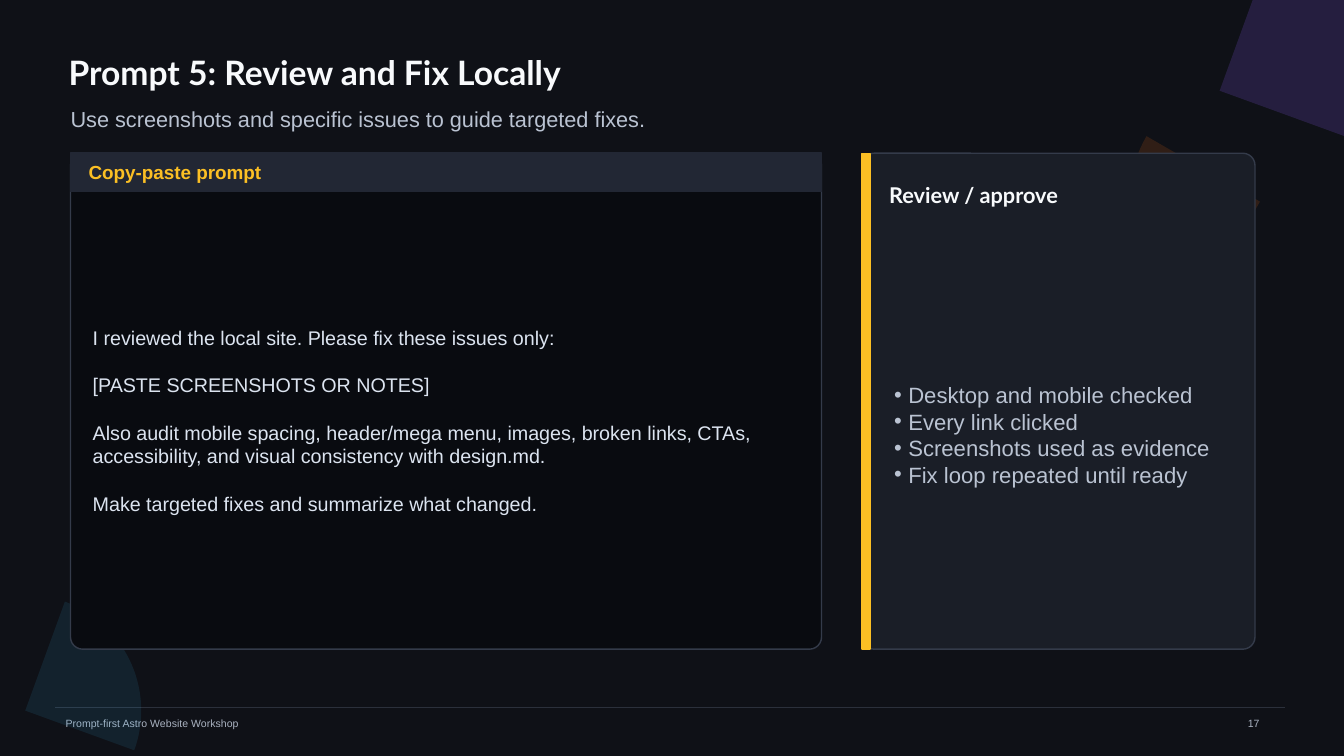
from dataclasses import dataclass

from lxml import etree
from pptx import Presentation
from pptx.dml.color import RGBColor
from pptx.enum.shapes import MSO_CONNECTOR, MSO_SHAPE
from pptx.enum.text import MSO_ANCHOR, MSO_AUTO_SIZE, PP_ALIGN
from pptx.oxml.ns import qn
from pptx.util import Inches, Pt

RECT, ROUNDED, ARC = MSO_SHAPE.RECTANGLE, MSO_SHAPE.ROUNDED_RECTANGLE, MSO_SHAPE.ARC
STRAIGHT = MSO_CONNECTOR.STRAIGHT
MIDDLE, LEFT, NO_FIT = MSO_ANCHOR.MIDDLE, PP_ALIGN.LEFT, MSO_AUTO_SIZE.NONE

WIDTH, HEIGHT = Inches(13.333), Inches(7.5)
CORNER = Inches(0.12)
BULLET_INDENT = Inches(0.14)
HEADING_FONT, TEXT_FONT = "Lato", "Arial"
COLORS = {
    "page": "0F1117", "rule": "2B303B", "footer": "AAB3C1", "white": "F8FAFC",
    "muted": "BAC3D2", "prompt": "DCE4F0", "amber": "FBBF24", "editor": "090B10",
    "header": "222734", "card": "1A1E27", "border": "343B4A",
    "violet": "8B5CF6", "orange": "F97316", "sky": "38BDF8",
}
PROMPT = [
    "I reviewed the local site. Please fix these issues only:",
    "[PASTE SCREENSHOTS OR NOTES]",
    "Also audit mobile spacing, header/mega menu, images, broken links, CTAs, "
    "accessibility, and visual consistency with design.md.",
    "Make targeted fixes and summarize what changed.",
]
CHECKS = [
    "Desktop and mobile checked",
    "Every link clicked",
    "Screenshots used as evidence",
    "Fix loop repeated until ready",
]


@dataclass
class Box:
    """Area in percent of the slide's width and height."""
    left: float
    top: float
    width: float
    height: float

    def inner(self, left, top, width, height):
        return Box(self.left + left, self.top + top, width, height)

    def lengths(self):
        return (int(WIDTH * self.left / 100), int(HEIGHT * self.top / 100),
                int(WIDTH * self.width / 100), int(HEIGHT * self.height / 100))


def rgb(name):
    return RGBColor.from_string(COLORS[name])


def add_panel(page, kind, box, fill, line=None):
    shape = page.shapes.add_shape(kind, *box.lengths())
    shape.shadow.inherit = False
    shape.fill.solid()
    shape.fill.fore_color.rgb = rgb(fill)
    if line:
        shape.line.color.rgb = rgb(line)
        shape.line.width = Pt(1)
    else:
        shape.line.fill.background()
    if kind == ROUNDED:
        shape.adjustments[0] = CORNER / min(shape.width, shape.height)
    return shape


def write(shape, lines, size, color, font=TEXT_FONT, bold=False, gap=0, bullet=False):
    frame = shape.text_frame
    frame.word_wrap = True
    frame.auto_size = NO_FIT
    frame.vertical_anchor = MIDDLE
    frame.margin_left = frame.margin_right = frame.margin_top = frame.margin_bottom = 0
    for index, line in enumerate(lines):
        para = frame.add_paragraph() if index else frame.paragraphs[0]
        para.alignment = LEFT
        para.space_before = Pt(gap if index else 0)
        if bullet:
            properties = para._p.get_or_add_pPr()
            properties.set("marL", str(BULLET_INDENT))
            properties.set("indent", str(-BULLET_INDENT))
            etree.SubElement(properties, qn("a:buChar")).set("char", "•")
        span = para.add_run()
        span.text = line
        span.font.name = font
        span.font.size = Pt(size)
        span.font.bold = bold
        span.font.color.rgb = rgb(color)


def add_text(page, box, lines, size, color, **style):
    write(page.shapes.add_textbox(*box.lengths()), lines, size, color, **style)


def fill_placeholder(shape, box, lines, size, color, **style):
    """Move a placeholder into the box, in front of everything drawn so far."""
    shape.left, shape.top, shape.width, shape.height = box.lengths()
    shape.element.getparent().append(shape.element)
    write(shape, lines, size, color, **style)


def add_footer(page, box, label, number):
    left, top, width, _ = box.lengths()
    rule = page.shapes.add_connector(STRAIGHT, left, top, left + width, top)
    rule.line.color.rgb = rgb("rule")
    rule.line.width = Pt(0.75)
    etree.SubElement(rule._element.spPr, qn("a:effectLst"))
    add_text(page, box.inner(0.75, 0.8, 41.25, 2.67), [label], 7.5, "footer")
    add_text(page, box.inner(88.72, 0.8, 5, 2.67), [number], 7.5, "footer")


def add_wedge(page, center_x, center_y, radius, turn, color, opacity):
    """Draw a quarter disc; the radius is a share of the slide's width."""
    tall = radius * WIDTH / HEIGHT
    box = Box(center_x - radius, center_y - tall, 2 * radius, 2 * tall)
    wedge = add_panel(page, ARC, box, color)
    wedge.rotation = turn
    fill_color = wedge._element.spPr.find(qn("a:solidFill"))[0]
    etree.SubElement(fill_color, qn("a:alpha")).set("val", str(opacity * 1000))


def add_heading(page, box, title, subtitle):
    fill_placeholder(page.shapes.title, box.inner(0, 0, box.width, 6.93), [title],
                     24, "white", font=HEADING_FONT, bold=True)
    add_text(page, box.inner(0.15, 7.87, box.width, 3.6), [subtitle], 15.5, "muted")


def add_prompt(page, box, label, lines):
    add_panel(page, ROUNDED, box, "editor", "border")
    add_panel(page, RECT, box.inner(0, 0, box.width, 5.07), "header", "header")
    add_text(page, box.inner(1.35, 1.6, box.width - 2.7, 1.73), [label],
             13.5, "amber", bold=True)
    add_text(page, box.inner(1.65, 7.33, box.width - 3.3, 56), lines,
             14.1, "prompt", gap=17)


def add_review(page, box, heading, checks):
    add_panel(page, ROUNDED, box, "card", "border")
    add_panel(page, RECT, box.inner(0, 0, 0.6, box.height), "amber", "amber")
    add_text(page, box.inner(2.03, 3.6, 25.65, 3.73), [heading],
             15.5, "white", font=HEADING_FONT, bold=True)
    fill_placeholder(page.placeholders[1], box.inner(2.4, 10.93, 25.13, 52.53),
                     checks, 15.8, "muted", bullet=True)


def main():
    deck = Presentation()
    deck.slide_width, deck.slide_height = WIDTH, HEIGHT
    page = deck.slides.add_slide(deck.slide_layouts[1])
    page.background.fill.solid()
    page.background.fill.fore_color.rgb = rgb("page")

    add_footer(page, Box(4.13, 93.6, 91.5, 6.4), "Prompt-first Astro Website Workshop", "17")
    add_wedge(page, 90.75, 12, 14.25, 20, "violet", 18)
    add_wedge(page, 93.75, 26.67, 9.75, 210, "orange", 14)
    add_wedge(page, 1.88, 94, 8.63, 20, "sky", 10)
    add_heading(page, Box(5.1, 6, 79.5, 11.5), "Prompt 5: Review and Fix Locally",
                "Use screenshots and specific issues to guide targeted fixes.")
    add_prompt(page, Box(5.25, 20.27, 55.88, 65.6), "Copy-paste prompt", PROMPT)
    add_review(page, Box(64.13, 20.27, 29.25, 65.6), "Review / approve", CHECKS)
    deck.save("out.pptx")


if __name__ == "__main__":
    main()
